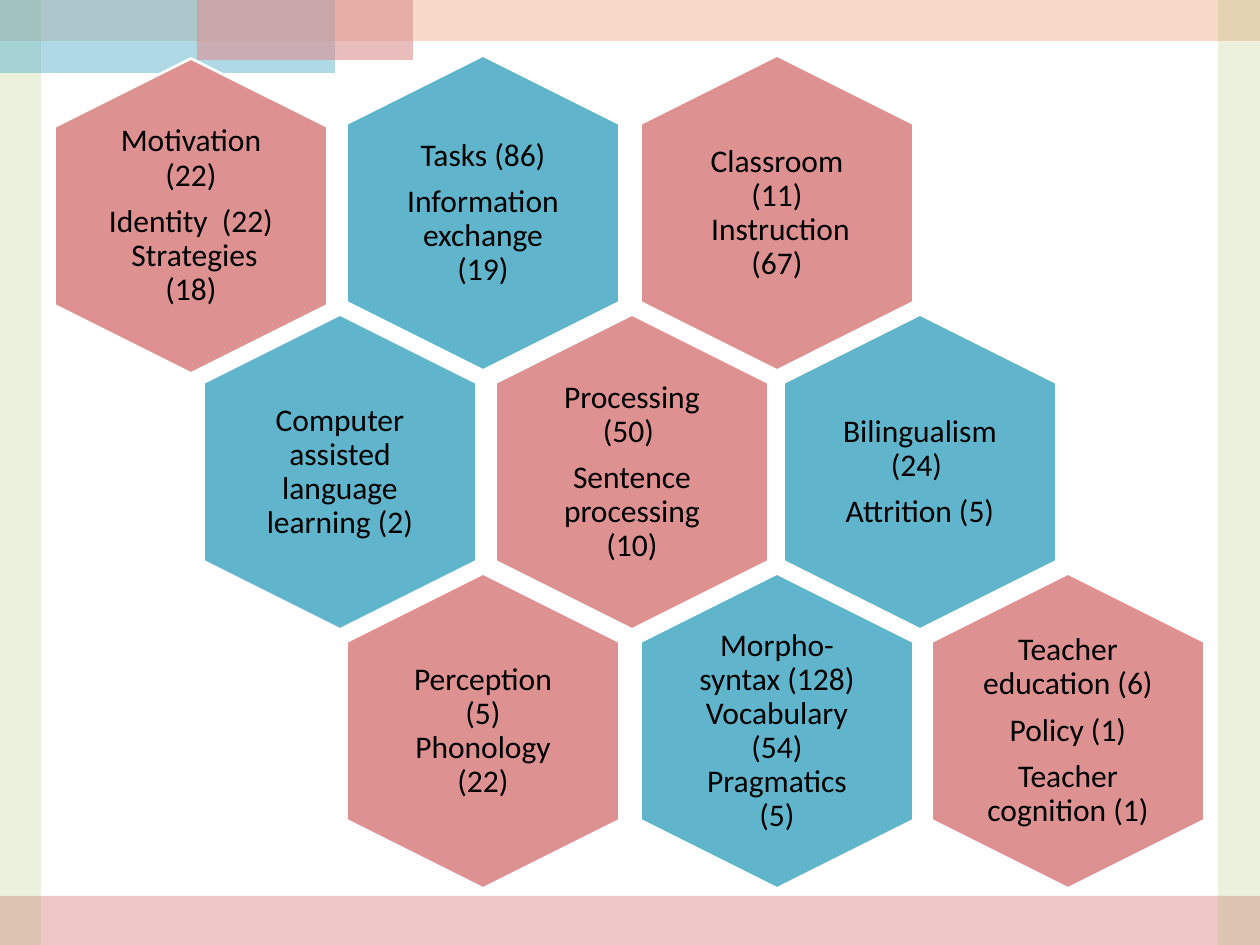
from lxml import etree
from pptx import Presentation
from pptx.dml.color import RGBColor
from pptx.enum import shapes, text
from pptx.oxml import ns
from pptx.util import Pt

PX = 914400 // 126
PINK = RGBColor(0xDD, 0x91, 0x91)
BLUE = RGBColor(0x60, 0xB5, 0xCC)
PEACH = RGBColor(0xF1, 0xB6, 0x97)
GREEN = RGBColor(0x9B, 0xBB, 0x59)
WHITE = RGBColor(0xFF, 0xFF, 0xFF)
BLACK = RGBColor(0x00, 0x00, 0x00)

PAGE_W, PAGE_H = 1260, 945
# left, top, width, height, colour, opacity in percent
BANDS = [
    (0, 896, PAGE_W, 49, PINK, 50),
    (0, 0, PAGE_W, 41, PEACH, 50),
    (0, 0, 41, PAGE_H, GREEN, 20),
    (0, 0, 335, 73, BLUE, 50),
    (197, 0, 216, 60, PINK, 60),
    (1218, 0, 42, PAGE_H, GREEN, 20),
]

# Each row of cells: (paragraphs, space after each paragraph in points)
ROWS = [
    [(["Motivation (22)", "Identity  (22)  Strategies (18)"], 7),
     (["Tasks (86)", "Information exchange (19)"], 7),
     (["Classroom (11)", " Instruction (67)"], 0)],
    [(["Computer assisted language learning (2)"], 7),
     (["Processing (50) ", "Sentence processing (10)"], 7),
     (["Bilingualism (24) ", "Attrition (5)"], 7)],
    [(["Perception (5) Phonology (22)"], 7),
     (["Morpho-syntax (128)", "Vocabulary (54)", "Pragmatics (5)"], 0),
     (["Teacher education (6)", "Policy (1)", "Teacher cognition (1)"], 7)],
]

# Every row starts one half-step further right, so it uses every other centre.
CENTRES_X = (191, 340, 483, 632, 777, 920, 1068)
FIRST_Y, ROW_STEP = 213, 259
FIRST_CELL_DROP = 3
HEX_LENGTH, HEX_BREADTH = 315, 273
LABEL_W, LABEL_H = 189, 217
INSET = 9


def add_filled(parent, kind, left, top, width, height, colour):
    shape = parent.shapes.add_shape(
        kind, *(round(n * PX) for n in (left, top, width, height)))
    shape.shadow.inherit = False
    shape.fill.solid()
    shape.fill.fore_color.rgb = colour
    shape.line.fill.background()
    return shape


def set_opacity(shape, percent):
    colour = shape.fill._xPr.find(".//" + ns.qn("a:srgbClr"))
    etree.SubElement(colour, ns.qn("a:alpha"), val=str(percent * 1000))


def add_label(parent, centre_x, centre_y, colour, lines, space_after):
    box = add_filled(parent, shapes.MSO_SHAPE.RECTANGLE,
                     centre_x - LABEL_W / 2, centre_y - LABEL_H / 2,
                     LABEL_W, LABEL_H, colour)
    frame = box.text_frame
    frame.word_wrap = True
    frame.vertical_anchor = text.MSO_ANCHOR.MIDDLE
    frame.margin_left = frame.margin_right = INSET * PX
    frame.margin_top = frame.margin_bottom = INSET * PX
    for index, line in enumerate(lines):
        para = frame.add_paragraph() if index else frame.paragraphs[0]
        para.alignment = text.PP_ALIGN.CENTER
        para.line_spacing = 0.9
        para.space_after = Pt(space_after)
        span = para.add_run()
        span.text = line
        span.font.name = "Calibri"
        span.font.size = Pt(18)
        span.font.color.rgb = BLACK


def add_cell(page, centre_x, centre_y, colour, lines, space_after):
    group = page.shapes.add_group_shape()
    hexagon = add_filled(group, shapes.MSO_SHAPE.HEXAGON,
                         centre_x - HEX_LENGTH / 2, centre_y - HEX_BREADTH / 2,
                         HEX_LENGTH, HEX_BREADTH, colour)
    hexagon.rotation = 90
    hexagon.line.color.rgb = WHITE
    hexagon.line.width = Pt(1.5)
    add_label(group, centre_x, centre_y, colour, lines, space_after)


def main():
    deck = Presentation()
    deck.slide_width, deck.slide_height = PAGE_W * PX, PAGE_H * PX
    page = deck.slides.add_slide(deck.slide_layouts[6])

    for *place, colour, opacity in BANDS:
        band = add_filled(page, shapes.MSO_SHAPE.RECTANGLE, *place, colour)
        set_opacity(band, opacity)

    for row, cells in enumerate(ROWS):
        for column, (lines, space_after) in enumerate(cells):
            drop = FIRST_CELL_DROP if row == column == 0 else 0
            add_cell(page, CENTRES_X[row + 2 * column],
                     FIRST_Y + row * ROW_STEP + drop,
                     (PINK, BLUE)[(row + column) % 2], lines, space_after)

    deck.save("out.pptx")


if __name__ == "__main__":
    main()
